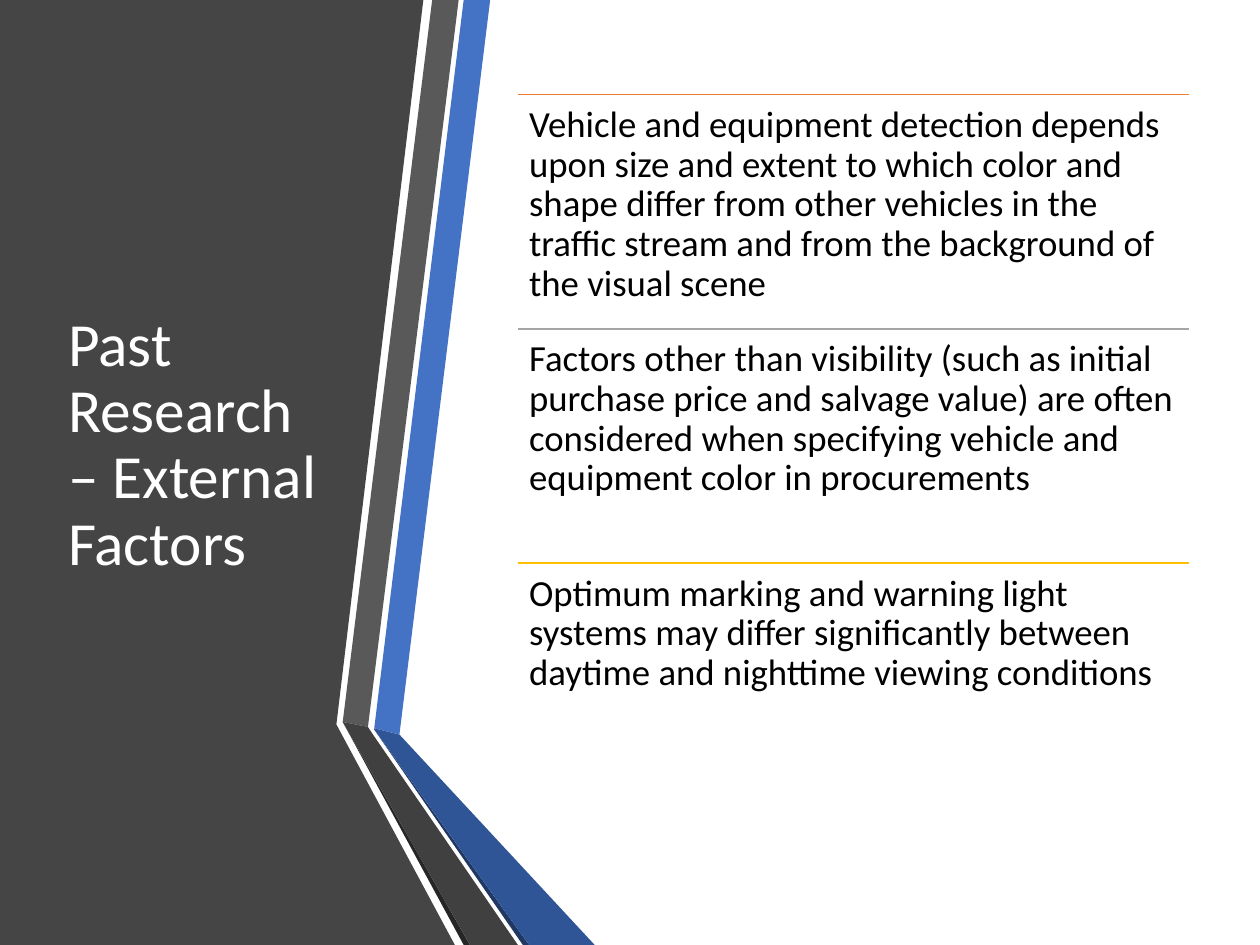
from dataclasses import dataclass

from lxml.etree import SubElement
from pptx import Presentation
from pptx.dml.color import RGBColor as Color
from pptx.enum.shapes import MSO_CONNECTOR as Connector
from pptx.enum.text import MSO_ANCHOR as Anchor, MSO_AUTO_SIZE as AutoSize, PP_ALIGN as Align
from pptx.oxml.ns import qn
from pptx.util import Inches, Pt

# The slide is a grid of 100 columns by 75 rows
WIDTH, HEIGHT = Inches(10), Inches(7.5)
COLUMNS, ROWS = 100, 75


@dataclass(frozen=True)
class Theme:
    font: str = "Calibri"
    title_size: int = 35
    body_size: int = 21
    line_spacing: float = 0.9
    title: str = "FFFFFF"
    body: str = "000000"
    panel: str = "454545"
    blue: str = "4472C4"
    blue_fold: str = "2F5597"
    blue_shade: str = "203864"
    gray: str = "595959"
    gray_fold: str = "404040"
    gray_shade: str = "262626"
    rules: tuple = ("ED7D31", "A5A5A5", "FFC000")


THEME = Theme()

TITLE = "Past Research – External Factors"
FINDINGS = (
    "Vehicle and equipment detection depends upon size and extent to which color and "
    "shape differ from other vehicles in the traffic stream and from the background of "
    "the visual scene",
    "Factors other than visibility (such as initial purchase price and salvage value) are "
    "often considered when specifying vehicle and equipment color in procurements",
    "Optimum marking and warning light systems may differ significantly between daytime "
    "and nighttime viewing conditions",
)

# Outlines as (column, row) points
PANEL = ((0, 0), (33.6, 0), (26.7, 57.5), (36.1, 75), (0, 75))
RIBBONS = (
    (THEME.blue, ((29.7, 57.8), (31.7, 58.3), (38.9, 0), (36.8, 0))),
    (THEME.gray, ((36.4, 0), (34.3, 0), (27.2, 57.3), (29.2, 57.7))),
    (THEME.gray_shade, ((27.2, 57.3), (36.8, 75), (37.3, 75))),
    (THEME.blue_shade, ((29.7, 57.9), (41.5, 75), (42, 75))),
    (THEME.blue_fold, ((29.7, 57.9), (42, 75), (47.2, 75), (31.7, 58.3), (29.7, 57.8))),
    (THEME.gray_fold, ((41.1, 75), (29.6, 58.3), (29.2, 57.7), (27.2, 57.3), (37.3, 75))),
)

# The findings fill three equal bands
LIST_LEFT, LIST_TOP, LIST_WIDTH, BAND_HEIGHT = 41.1, 7.5, 53.3, 18.6


def across(columns):
    return round(WIDTH * columns / COLUMNS)


def down(rows):
    return round(HEIGHT * rows / ROWS)


def add_outline(shapes, points, color):
    """Draw a closed, filled outline."""
    start, *others = [(across(column), down(row)) for column, row in points]
    builder = shapes.build_freeform(*start)
    builder.add_line_segments(others, close=True)
    shape = builder.convert_to_shape()
    shape.shadow.inherit = False
    shape.fill.solid()
    shape.fill.fore_color.rgb = Color.from_string(color)
    shape.line.fill.background()


def add_rule(shapes, left, top, width, color):
    """Draw a thin horizontal line."""
    rule = shapes.add_connector(
        Connector.STRAIGHT, across(left), down(top), across(left + width), down(top))
    rule.line.color.rgb = Color.from_string(color)
    rule.line.width = Pt(1)
    SubElement(rule.element.spPr, qn("a:effectLst"))


def write_text(frame, text, size, color):
    """Fill a text frame with one left-aligned paragraph."""
    frame.word_wrap = True
    frame.auto_size = AutoSize.NONE
    paragraph = frame.paragraphs[0]
    paragraph.alignment = Align.LEFT
    paragraph.line_spacing = THEME.line_spacing
    run = paragraph.add_run()
    run.text = text
    run.font.name = THEME.font
    run.font.size = Pt(size)
    run.font.color.rgb = Color.from_string(color)


def add_finding(shapes, text, top, rule_color):
    """Add one band: a coloured rule with its text below."""
    add_rule(shapes, LIST_LEFT, top, LIST_WIDTH, rule_color)
    box = shapes.add_textbox(
        across(LIST_LEFT), down(top), across(LIST_WIDTH), down(BAND_HEIGHT))
    frame = box.text_frame
    frame.margin_left = frame.margin_right = Inches(0.09)
    frame.margin_top = frame.margin_bottom = Inches(0.09)
    write_text(frame, text, THEME.body_size, THEME.body)


def place_title(slide):
    """Move the title placeholder onto the dark panel, in front of it."""
    title = slide.shapes.title
    title.left, title.top = across(4.4), down(7.5)
    title.width, title.height = across(22.8), down(55.8)
    title.text_frame.vertical_anchor = Anchor.MIDDLE
    write_text(title.text_frame, TITLE, THEME.title_size, THEME.title)
    slide.shapes.element.append(title.element)


def main():
    presentation = Presentation()
    presentation.slide_width, presentation.slide_height = WIDTH, HEIGHT
    slide = presentation.slides.add_slide(presentation.slide_layouts.get_by_name("Title Only"))

    # Dark panel and folded ribbons
    add_outline(slide.shapes, PANEL, THEME.panel)
    ribbons = slide.shapes.add_group_shape()
    for color, points in RIBBONS:
        add_outline(ribbons.shapes, points, color)

    # Title and findings
    place_title(slide)
    for index, (text, color) in enumerate(zip(FINDINGS, THEME.rules)):
        add_finding(slide.shapes, text, LIST_TOP + index * BAND_HEIGHT, color)

    presentation.save("out.pptx")


if __name__ == "__main__":
    main()
